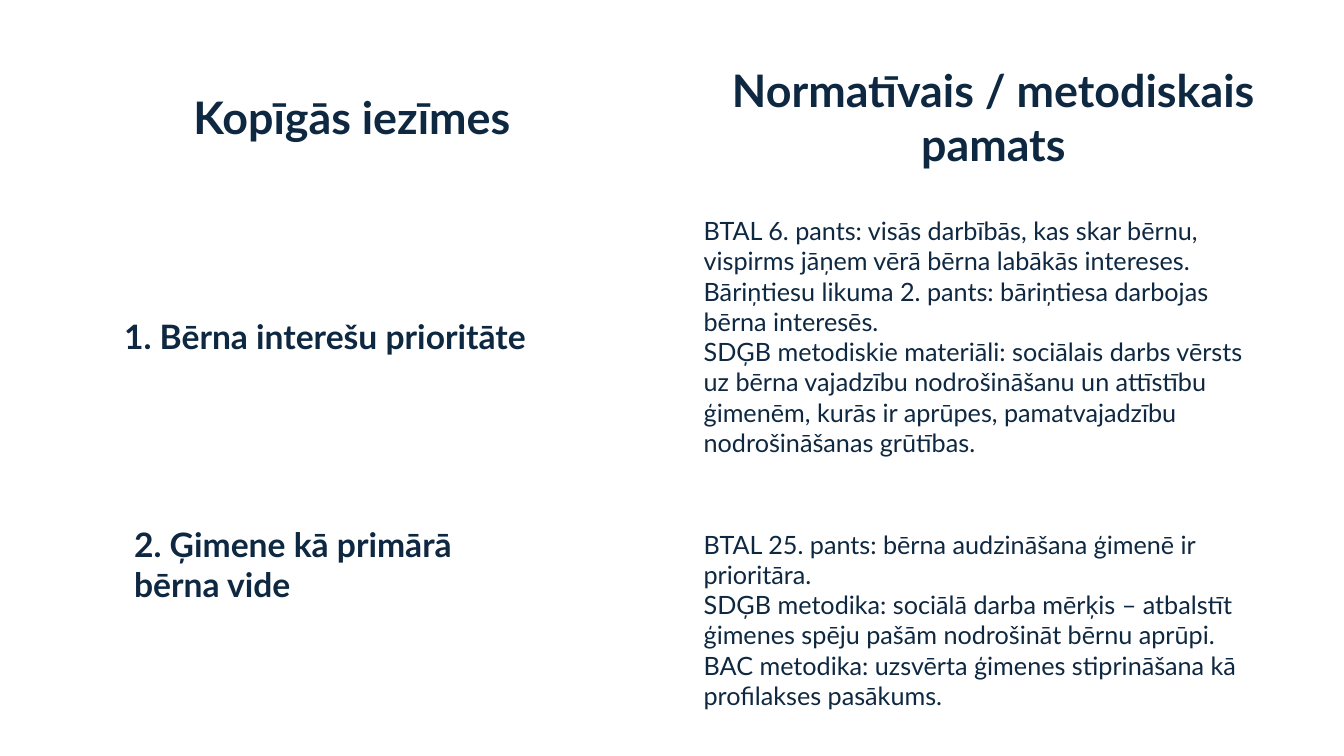
from pptx import Presentation
from pptx.dml.color import RGBColor
from pptx.enum import text
from pptx.util import Pt

NAVY = RGBColor(0x0E, 0x28, 0x41)
FONT = "Lato"
HEADING, TOPIC, BODY = 32, 24, 18

BEST_INTERESTS = (
    "BTAL 6. pants: visās darbībās, kas skar bērnu, vispirms jāņem vērā bērna labākās intereses. \n"
    "Bāriņtiesu likuma 2. pants: bāriņtiesa darbojas bērna interesēs. \n"
    "SDĢB metodiskie materiāli: sociālais darbs vērsts uz bērna vajadzību nodrošināšanu un attīstību "
    "ģimenēm, kurās ir aprūpes, pamatvajadzību nodrošināšanas grūtības."
)
FAMILY_FIRST = (
    "BTAL 25. pants: bērna audzināšana ģimenē ir prioritāra. \n"
    "SDĢB metodika: sociālā darba mērķis – atbalstīt ģimenes spēju pašām nodrošināt bērnu aprūpi. \n"
    "BAC metodika: uzsvērta ģimenes stiprināšana kā profilakses pasākums."
)


class TableSlide:
    def __init__(self, s, font, color):
        self.s, self.font, self.color = s, font, color

    def row(self, left, top, col_width, height, cells, align=text.PP_ALIGN.LEFT):
        """Add a one-row plain table; cells holds (wording, size, bold) for equal columns."""
        frame = self.s.shapes.add_table(
            1, len(cells), Pt(left), Pt(top), Pt(col_width * len(cells)), Pt(height))
        table = frame.table
        table.first_row = table.horz_banding = False
        for cell, (wording, size, bold) in zip(table.iter_cells(), cells):
            cell.fill.background()
            cell.vertical_anchor = text.MSO_ANCHOR.MIDDLE
            p = cell.text_frame.paragraphs[0]
            p.text = wording
            p.alignment = align
            p.font.name = self.font
            p.font.size = Pt(size)
            p.font.bold = bold
            p.font.color.rgb = self.color


def main():
    prs = Presentation()
    prs.slide_width, prs.slide_height = Pt(960), Pt(540)
    slide = TableSlide(prs.slides.add_slide(prs.slide_layouts[6]), FONT, NAVY)

    slide.row(22.3, 41.8, 458.2, 84.2,
              [("Kopīgās iezīmes", HEADING, True),
               ("Normatīvais / metodiskais pamats", HEADING, True)],
              text.PP_ALIGN.CENTER)
    slide.row(81.4, 150.5, 414, 180,
              [("1. Bērna interešu prioritāte", TOPIC, True),
               (BEST_INTERESTS, BODY, False)])
    slide.row(88.6, 370.8, 288.7, 64.8,
              [("2. Ģimene kā primārā bērna vide", TOPIC, True)])
    slide.row(495.4, 374.4, 419, 115.2, [(FAMILY_FIRST, BODY, False)])

    prs.save("out.pptx")


if __name__ == "__main__":
    main()
